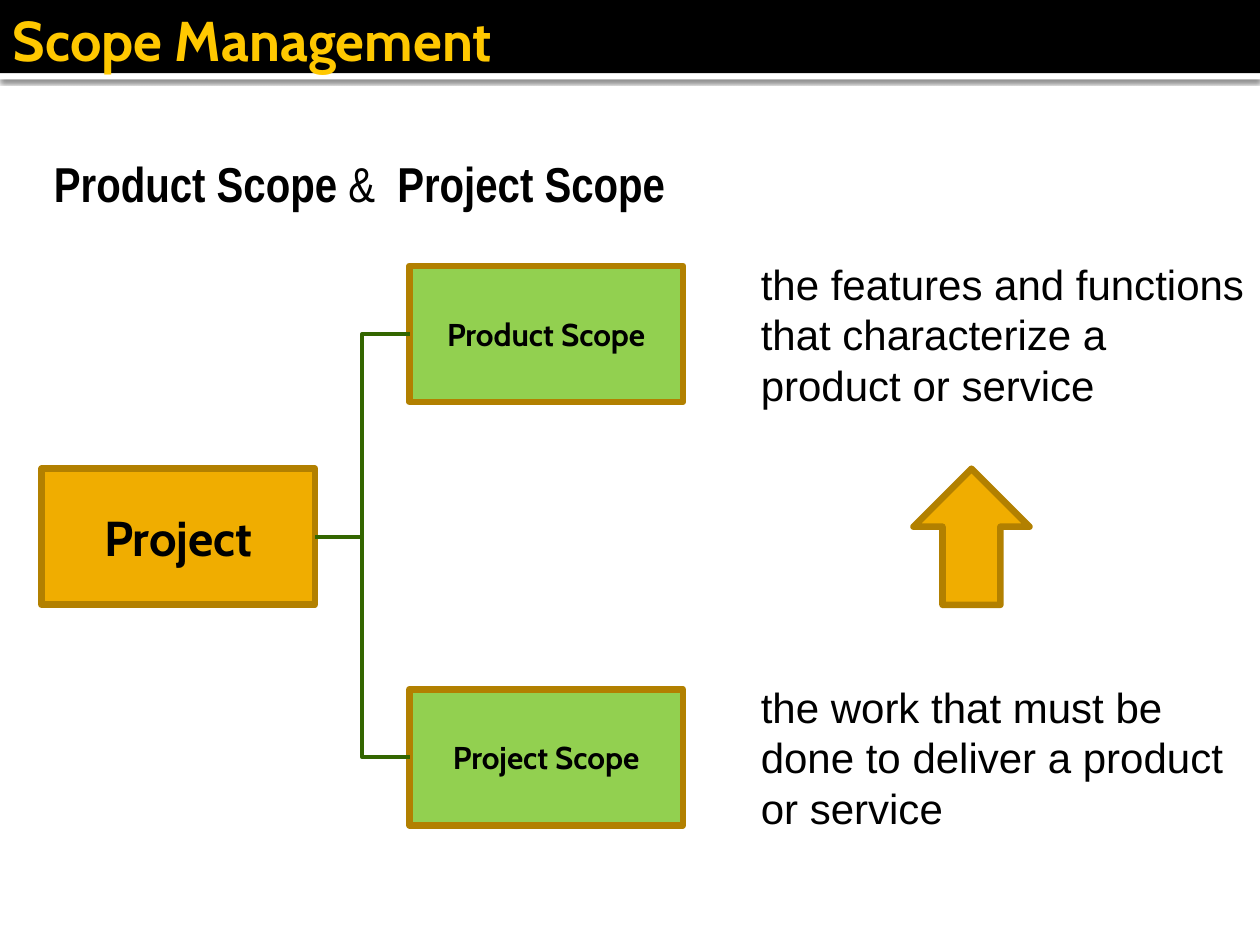
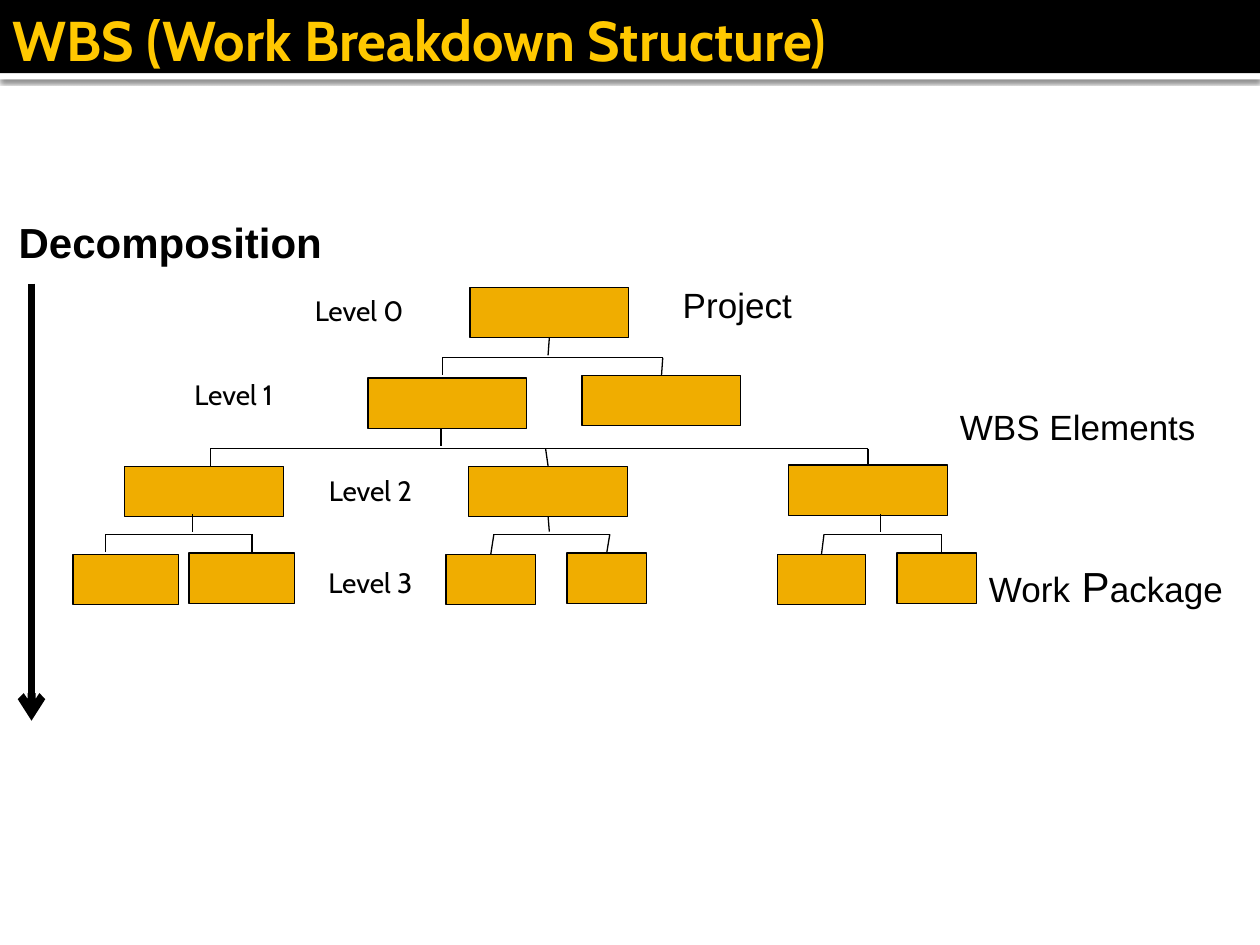
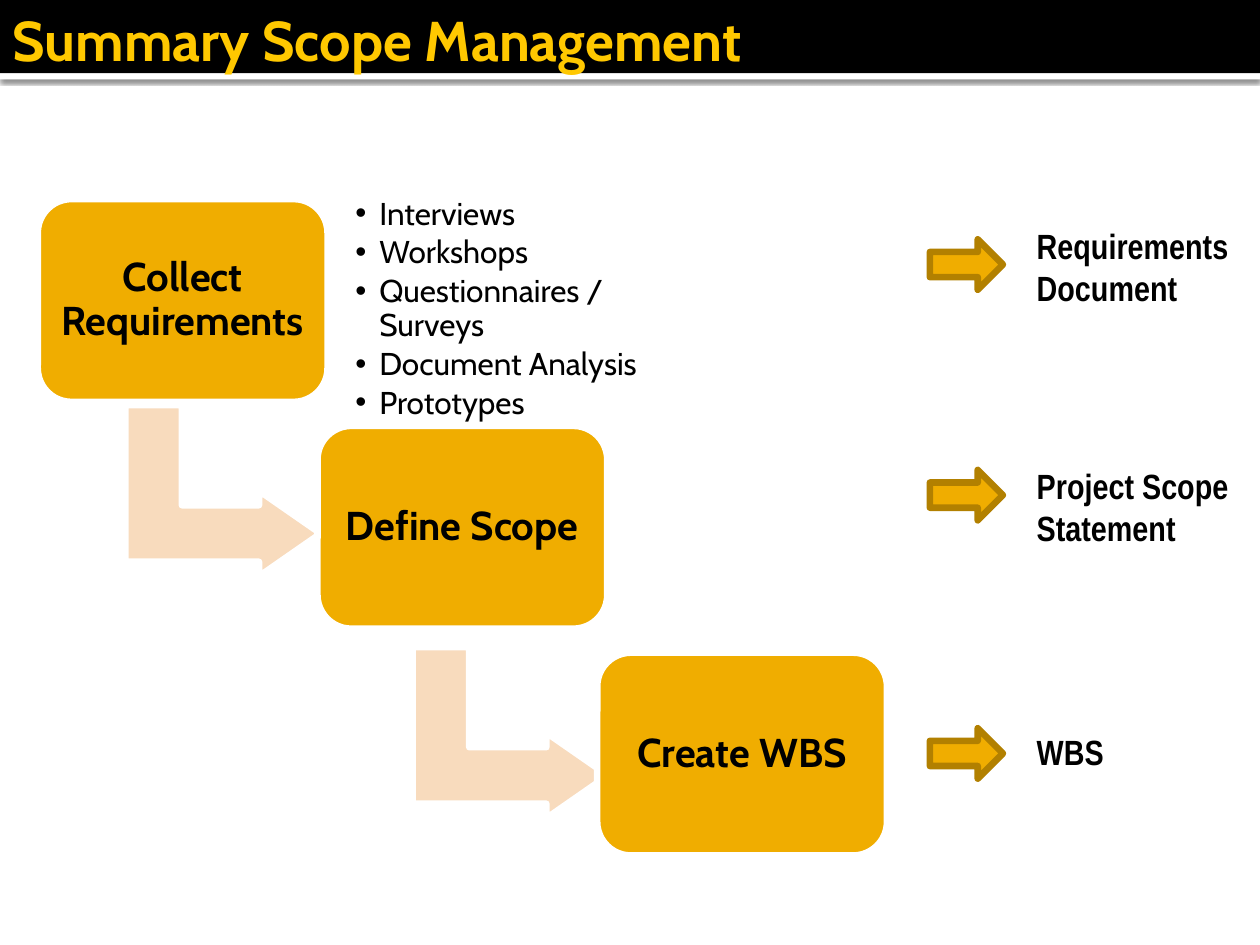
from dataclasses import dataclass

from pptx import Presentation
from pptx.dml.color import RGBColor
from pptx.enum.shapes import MSO_CONNECTOR, MSO_SHAPE
from pptx.enum.text import MSO_ANCHOR, MSO_AUTO_SIZE, PP_ALIGN
from pptx.oxml.ns import qn
from pptx.util import Inches, Pt
from lxml import etree

RECT, ROUNDED = MSO_SHAPE.RECTANGLE, MSO_SHAPE.ROUNDED_RECTANGLE
UP, RIGHT, BENT = MSO_SHAPE.UP_ARROW, MSO_SHAPE.RIGHT_ARROW, MSO_SHAPE.BENT_UP_ARROW
STRAIGHT, ELBOW = MSO_CONNECTOR.STRAIGHT, MSO_CONNECTOR.ELBOW
LEFT, CENTER = PP_ALIGN.LEFT, PP_ALIGN.CENTER
TOP, MIDDLE = MSO_ANCHOR.TOP, MSO_ANCHOR.MIDDLE
NO_FIT = MSO_AUTO_SIZE.NONE


@dataclass(frozen=True)
class Theme:
    black: str = "000000"
    white: str = "FFFFFF"
    title: str = "FFC800"
    amber: str = "F0AD00"
    brown: str = "B28000"
    lime: str = "92D050"
    green: str = "336600"
    peach: str = "F8DBBD"
    head: str = "Cabin"
    body: str = "Arial"
    narrow: str = "Arial Narrow"
    title_size: float = 32
    large: float = 28
    text: float = 24
    step: float = 23
    label: float = 20
    small: float = 18
    level: float = 16
    thick: float = 3.78
    thin: float = 0.75


T = Theme()


def write(sp, *paras, size=T.text, font=T.body, color=T.black, bold=False,
          align=LEFT, anchor=TOP, inset=(0.1, 0.05, 0.1, 0.05),
          margin=0, indent=0, before=0, after=0, spacing=1.0):
    tf = sp.text_frame
    tf.word_wrap, tf.auto_size, tf.vertical_anchor = True, NO_FIT, anchor
    tf.margin_left, tf.margin_top, tf.margin_right, tf.margin_bottom = map(Inches, inset)
    for i, runs in enumerate(paras):
        p = tf.add_paragraph() if i else tf.paragraphs[0]
        p.alignment, p.line_spacing = align, spacing
        p.space_before, p.space_after = Pt(before), Pt(after)
        pPr = p._p.get_or_add_pPr()
        pPr.set("marL", str(Inches(margin)))
        pPr.set("indent", str(Inches(indent)))
        for text, run_size, run_bold in [(runs, size, bold)] if isinstance(runs, str) else runs:
            r = p.add_run()
            r.text = text
            r.font.name, r.font.size, r.font.bold = font, Pt(run_size), run_bold
            r.font.color.rgb = RGBColor.from_string(color)


def draw(s, kind, x, y, w, h, fill=T.amber, line=None, width=T.thick):
    sp = s.shapes.add_shape(kind, Inches(x), Inches(y), Inches(w), Inches(h))
    sp.shadow.inherit = False
    sp.fill.solid()
    sp.fill.fore_color.rgb = RGBColor.from_string(fill)
    if line:
        sp.line.color.rgb = RGBColor.from_string(line)
        sp.line.width = Pt(width)
    else:
        sp.line.fill.background()
    return sp


prs = Presentation()
prs.slide_width, prs.slide_height = Inches(10), Inches(7.5)
content_layout, title_layout = prs.slide_layouts[1], prs.slide_layouts[5]
slides = []
for title, layout in [("Scope Management", title_layout),
                      ("WBS (Work Breakdown Structure)", title_layout),
                      ("Summary Scope Management", content_layout)]:
    s = prs.slides.add_slide(layout)
    sp = s.shapes.title
    sp.left, sp.top, sp.width, sp.height = map(Inches, (0, 0, 10, 0.62))
    write(sp, title, size=T.title_size, font=T.head, color=T.title, bold=True,
          anchor=MIDDLE, inset=(0.1, 0.05, 0.05, 0.05))
    slides.append(s)
scope, wbs, summary = slides
connectors = []

rule = draw(scope, RECT, 0, 0.58, 10, 0.05, T.white)
band = draw(scope, RECT, 0, 0, 10, 0.58, T.black)
shadow = etree.SubElement(rule._element.spPr.find(qn("a:effectLst")), qn("a:outerShdw"),
                          blurRad=str(Pt(2.5)), dist=str(Pt(0.8)), dir="5400000")
shade = etree.SubElement(shadow, qn("a:srgbClr"), val=T.black)
etree.SubElement(shade, qn("a:alpha"), val="60000")
for i, sp in enumerate((rule, band)):
    prs.slide_master.shapes.element.insert(2 + i, sp._element)

s = scope
project = draw(s, RECT, 0.33, 3.72, 2.17, 1.08, T.amber, T.brown)
write(project, "Project", size=T.large, font=T.head, bold=True, align=CENTER, anchor=MIDDLE)
for y, name, meaning in [
    (2.11, "Product Scope", "the features and functions that characterize a product or service"),
    (5.47, "Project Scope", "the work that must be done to deliver a product or service"),
]:
    sp = draw(s, RECT, 3.25, y, 2.17, 1.08, T.lime, T.brown)
    write(sp, name, size=T.small, font=T.head, bold=True, align=CENTER, anchor=MIDDLE)
    c = s.shapes.add_connector(ELBOW, 0, 0, 0, 0)
    c.begin_connect(project, 3)
    c.end_connect(sp, 1)
    connectors.append((c, T.green, 2.25))
    tb = s.shapes.add_textbox(Inches(5.44), Inches(y - 0.11), Inches(4.56), Inches(1.31))
    write(tb, meaning, margin=0.5)
draw(s, UP, 7.25, 3.72, 0.92, 1.08, T.amber, T.brown)
tb = s.shapes.add_textbox(Inches(0.33), Inches(1.17), Inches(5.42), Inches(0.57))
write(tb, [("Product Scope", T.large, True), (" &  ", T.large, False),
           ("Project Scope", T.large, True)], font=T.narrow)

s = wbs
elements = [draw(s, RECT, x, y, w, 0.4, T.amber, T.black, T.thin) for x, y, w in [
    (3.73, 2.28, 1.26),
    (2.92, 3, 1.26), (4.62, 2.98, 1.26),
    (0.99, 3.7, 1.26), (3.72, 3.7, 1.26), (6.26, 3.69, 1.26),
    (0.58, 4.4, 0.84), (1.5, 4.39, 0.84),
    (3.54, 4.4, 0.71), (4.5, 4.39, 0.63),
    (6.17, 4.4, 0.7), (7.12, 4.39, 0.63),
]]
links = []
for stem, top, drops in [
    (4.35, 2.68, (3.51, 5.26)),
    (3.5, 3.4, (1.67, 4.33, 6.89)),
    (1.53, 4.08, (0.84, 2)),
    (4.36, 4.08, (3.92, 4.84)),
    (6.99, 4.08, (6.54, 7.47)),
]:
    bar = top + 0.16
    links += [(stem, top, stem, top + 0.14), (drops[0], bar, drops[-1], bar)]
    links += [(x, bar, x, bar + 0.14) for x in drops]
near = Inches(0.03)
for link in links:
    x1, y1, x2, y2 = map(Inches, link)
    c = s.shapes.add_connector(STRAIGHT, x1, y1, x2, y2)
    connectors.append((c, T.black, T.thin))
    for sp in elements:
        if x1 == x2 and abs(sp.left + sp.width // 2 - x1) <= near:
            if abs(sp.top + sp.height - y1) <= near:
                c.begin_connect(sp, 2)
            if abs(sp.top - y2) <= near:
                c.end_connect(sp, 0)
arrow = s.shapes.add_connector(STRAIGHT, Inches(0.25), Inches(2.25), Inches(0.25), Inches(5.72))
connectors.append((arrow, T.black, 4.5))

tb = s.shapes.add_textbox(Inches(-0.08), Inches(1.67), Inches(2.94), Inches(0.58))
write(tb, "Decomposition", bold=True, margin=0.13)
for x, y, w, label in [
    (5.32, 2.2, 1.51, "Project"),
    (7.52, 3.17, 2.32, "WBS Elements"),
    (7.75, 4.4, 2.25, [("Work", T.label, False), (" P", T.text, False),
                       ("ackage", T.label, False)]),
]:
    tb = s.shapes.add_textbox(Inches(x), Inches(y), Inches(w), Inches(0.47))
    write(tb, label, size=T.label, before=2)
for i, (x, y, w) in enumerate([(2.33, 2.24, 1.04), (1.17, 2.91, 1.37),
                               (2.42, 3.67, 1.04), (2.42, 4.4, 1.04)]):
    tb = s.shapes.add_textbox(Inches(x), Inches(y), Inches(w), Inches(0.44))
    write(tb, f"Level {i}", size=T.level, font=T.head, align=CENTER, anchor=MIDDLE)

s = summary
techniques = s.placeholders[1]
techniques.left, techniques.top, techniques.width, techniques.height = map(
    Inches, (2.72, 1.47, 2.99, 1.82))
write(techniques, "Interviews", "Workshops", "Questionnaires / Surveys",
      "Document Analysis", "Prototypes", size=T.small, font=T.head,
      inset=(0.1,) * 4, margin=0.19, indent=-0.19, after=2.7, spacing=0.9)
steps = ["Collect Requirements", "Define Scope", "Create WBS"]
for i, name in enumerate(steps):
    if i < len(steps) - 1:
        sp = draw(s, BENT, 1.09 + 2.28 * i, 3.12 + 1.92 * i, 1.36, 1.55, T.peach, T.white)
        sp.rotation = 90
        for n, value in enumerate((0.33, 0.25, 0.36)):
            sp.adjustments[n] = value
    sp = draw(s, ROUNDED, 0.3 + 2.22 * i, 1.58 + 1.8 * i, 2.3, 1.61, T.amber, T.white)
    write(sp, name, size=T.step, font=T.head, bold=True, align=CENTER, anchor=MIDDLE,
          inset=(0.1,) * 4, spacing=0.9)
for y, arrow_y, h, output in [
    (1.73, 1.9, 0.77, "Requirements Document"),
    (3.64, 3.73, 0.77, "Project Scope Statement"),
    (5.75, 5.78, 0.44, "WBS"),
]:
    draw(s, RIGHT, 7.38, arrow_y, 0.58, 0.4, T.amber, T.brown)
    tb = s.shapes.add_textbox(Inches(8), Inches(y), Inches(2), Inches(h))
    write(tb, output, size=T.label, font=T.narrow, bold=True, margin=0.13)

for c, color, width in connectors:
    c.line.color.rgb = RGBColor.from_string(color)
    c.line.width = Pt(width)
    etree.SubElement(c._element.spPr, qn("a:effectLst"))
etree.SubElement(arrow._element.spPr.find(qn("a:ln")), qn("a:tailEnd"), type="arrow")

prs.save("out.pptx")
